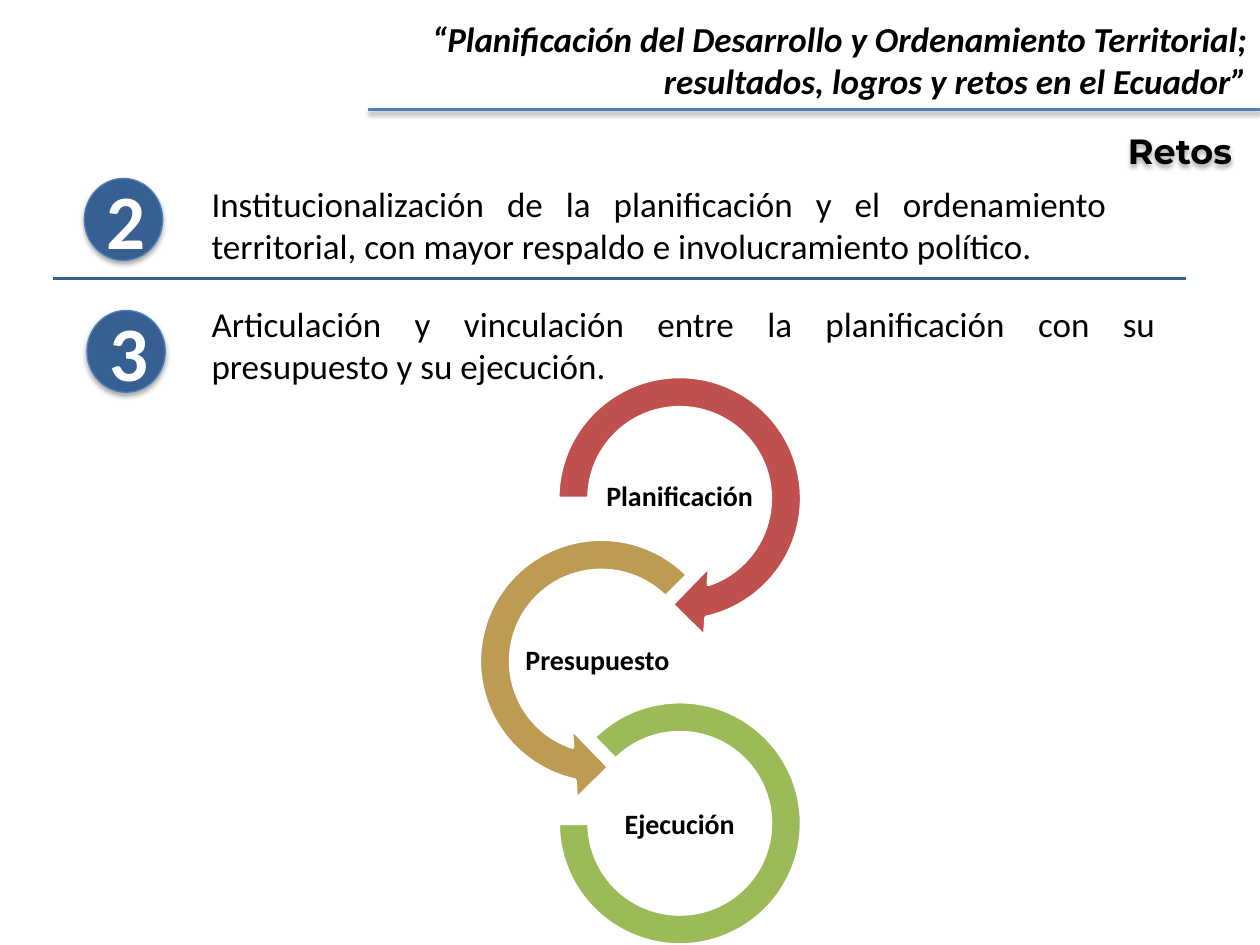
import pptx
import pptx.dml.color
import pptx.enum.shapes
import pptx.enum.text
import pptx.util
from lxml import etree
from pptx.oxml.ns import qn

Pt = pptx.util.Pt
MSO = pptx.enum.shapes.MSO_SHAPE
STRAIGHT = pptx.enum.shapes.MSO_CONNECTOR.STRAIGHT
ALIGN = pptx.enum.text.PP_ALIGN
MIDDLE = pptx.enum.text.MSO_ANCHOR.MIDDLE
rgb = pptx.dml.color.RGBColor.from_string

prs = pptx.Presentation()
prs.slide_width, prs.slide_height = Pt(720), Pt(540)
s = prs.slides.add_slide(prs.slide_layouts[6])


def set_shadow(sp, dist=0, alpha=0):
    """Replace the theme shadow: none, or a soft one straight below."""
    effects = etree.SubElement(sp._element.spPr, qn("a:effectLst"))
    if dist:
        outer = etree.SubElement(effects, qn("a:outerShdw"), blurRad=str(Pt(3.1)),
                                 dist=str(Pt(dist)), dir="5400000", rotWithShape="0")
        color = etree.SubElement(outer, qn("a:srgbClr"), val="000000")
        etree.SubElement(color, qn("a:alpha"), val=str(alpha * 1000))


def add_text(box, lines, size, align, color="000000", bold=False, italic=False, font="Calibri"):
    tf = box.text_frame
    tf.word_wrap = True
    tf.text = "\n".join(lines)
    for p in tf.paragraphs:
        p.alignment = align
        p.font.name, p.font.size = font, Pt(size)
        p.font.bold, p.font.italic = bold, italic
        p.font.color.rgb = rgb(color)
    return tf


# Section label
sp = s.shapes.add_shape(MSO.ROUNDED_RECTANGLE, Pt(598.3), Pt(64.1), Pt(157.7), Pt(43.9))
sp.fill.background()
sp.line.fill.background()
set_shadow(sp, 1.8, 35)
add_text(sp, ["Retos "], 20, ALIGN.CENTER, bold=True, font="Montserrat").vertical_anchor = MIDDLE

# Rules under the title and between the two challenges
for x1, x2, y, color, width, shadow in [
    (210.2, 720, 62.6, "4F81BD", 2, (1.6, 38)),
    (30.2, 677.5, 159.1, "376092", 1.5, ()),
]:
    line = s.shapes.add_connector(STRAIGHT, Pt(x1), Pt(y), Pt(x2), Pt(y))
    line.line.color.rgb = rgb(color)
    line.line.width = Pt(width)
    set_shadow(line, *shadow)

# Title
box = s.shapes.add_textbox(Pt(121), Pt(6.5), Pt(599), Pt(55.4))
add_text(box, ["“Planificación del Desarrollo y Ordenamiento Territorial;",
               "resultados, logros y retos en el Ecuador”"],
         20, ALIGN.RIGHT, bold=True, italic=True)

# Numbered challenges
for number, x, y, text_y, text_w, text in [
    ("2", 48.2, 102, 100.8, 525.6,
     "Institucionalización de la planificación y el ordenamiento territorial, "
     "con mayor respaldo e involucramiento político."),
    ("3", 49.7, 177.4, 169.2, 553.7,
     "Articulación y vinculación entre la planificación con su presupuesto y su ejecución."),
]:
    box = s.shapes.add_textbox(Pt(113.8), Pt(text_y), Pt(text_w), Pt(55.4))
    add_text(box, [text], 20, ALIGN.JUSTIFY)
    sp = s.shapes.add_shape(MSO.OVAL, Pt(x), Pt(y), Pt(44.8), Pt(46.8))
    sp.fill.solid()
    sp.fill.fore_color.rgb = rgb("376092")
    sp.line.color.rgb = rgb("4B7EBC")
    sp.line.width = Pt(0.75)
    set_shadow(sp, 1.8, 35)
    box = s.shapes.add_textbox(Pt(x + 5.8), Pt(y - 6.8), Pt(33.8), Pt(60.5))
    add_text(box, [number], 44, ALIGN.LEFT, color="FFFFFF", bold=True)

# Cycle: arc shape, position, size, adjustments, colour, then label and its position
for kind, x, y, size, adjustments, color, label, label_x, label_y in [
    (MSO.CIRCULAR_ARROW, 307.4, 203.8, 162, (0.11, 11.42, 45, 108, 0.125),
     "C0504D", "Planificación", 343.4, 262.1),
    (MSO.LEFT_CIRCULAR_ARROW, 262.6, 296.8, 162, (0.11, 11.42, 63, 189, 0.125),
     "BD9B53", "Presupuesto ", 298.2, 355.7),
    (MSO.BLOCK_ARC, 319, 401, 139, (135, 108, 0.127),
     "9BBB59", "Ejecución", 343.4, 449.3),
]:
    sp = s.shapes.add_shape(kind, Pt(x), Pt(y), Pt(size), Pt(size))
    for i, value in enumerate(adjustments):
        sp.adjustments[i] = value
    sp.fill.solid()
    sp.fill.fore_color.rgb = rgb(color)
    sp.line.color.rgb = rgb("FFFFFF")
    sp.line.width = Pt(2)
    set_shadow(sp)
    box = s.shapes.add_textbox(Pt(label_x), Pt(label_y), Pt(90), Pt(44.6))
    tf = add_text(box, [label], 16, ALIGN.CENTER, bold=True)
    tf.vertical_anchor = MIDDLE
    tf.margin_left = tf.margin_right = tf.margin_top = tf.margin_bottom = Pt(0.8)
    tf.paragraphs[0].line_spacing = 0.9

prs.save("out.pptx")
